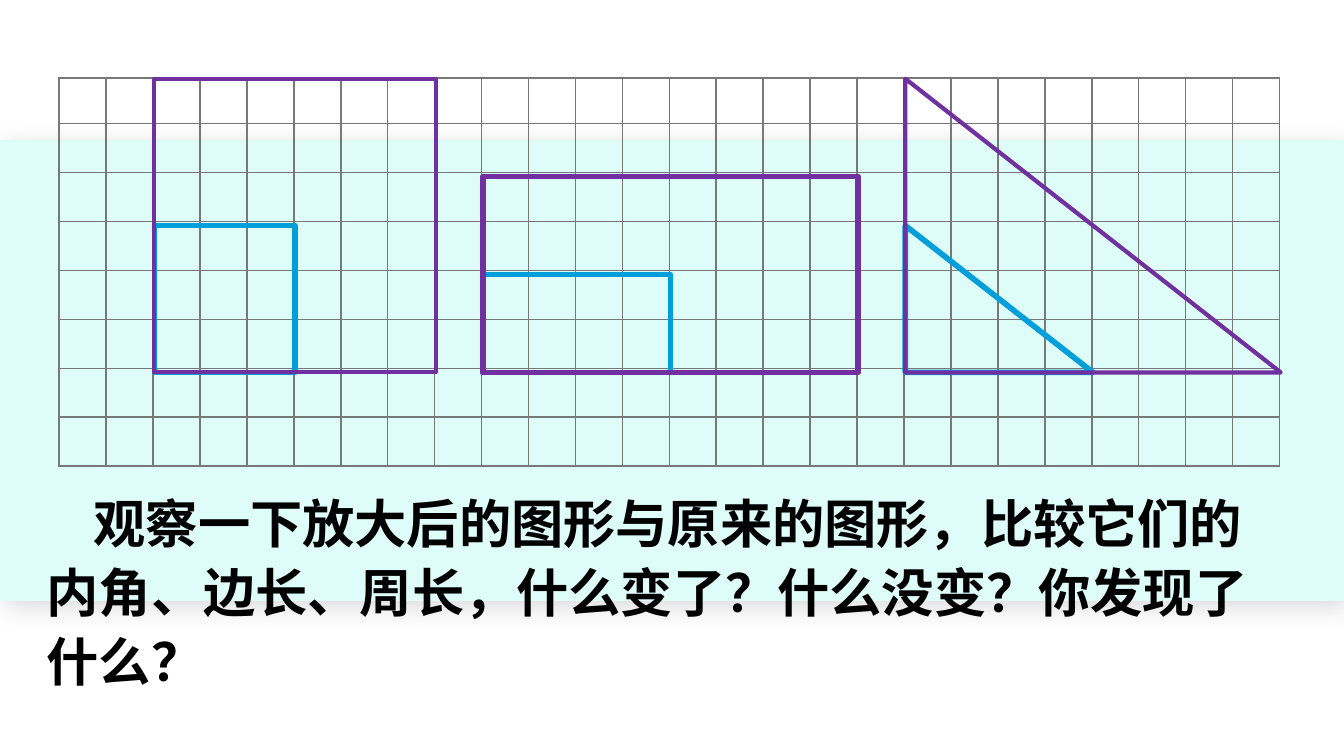
from lxml import etree
from pptx import Presentation
from pptx.dml.color import RGBColor
from pptx.enum.shapes import MSO_SHAPE
from pptx.oxml.ns import qn
from pptx.util import Inches, Pt

RECT, TRIANGLE = MSO_SHAPE.RECTANGLE, MSO_SHAPE.RIGHT_TRIANGLE
COLORS = {"band": "DEFDF8", "grid": "787878", "small": "009FDC",
          "large": "7030A0", "text": "000000", "shadow": "000000"}
FONT = "Noto Sans CJK SC"
W = 10
H = W * 9 / 16
COLS, ROWS = 26, 8
GRID = (0.44, 0.58, 9.08, 2.89)
FIRST_ROW = 0.34
COL_W = GRID[2] / COLS
ROW_H = (GRID[3] - FIRST_ROW) / (ROWS - 1)
BASE = GRID[1] + FIRST_ROW + 5 * ROW_H + 0.03

# shape, start column, columns wide, rows high, line width once enlarged
FIGURES = [(RECT, 2, 3, 3, 2.25), (RECT, 9, 4, 2, 3), (TRIANGLE, 18, 4, 3, 2.25)]
QUESTION = ("观察一下放大后的图形与原来的图形，比较它们的内角、边长、周长，"
            "什么变了？什么没变？你发现了什么？")


def rgb(name):
    return RGBColor.from_string(COLORS[name])


def inches(box):
    return [Inches(v) for v in box]


def add_solid(parent, color):
    fill = etree.SubElement(parent, qn("a:solidFill"))
    etree.SubElement(fill, qn("a:srgbClr"), val=COLORS[color])


def add_band(s, box):
    sp = s.shapes.add_shape(RECT, *inches(box))
    sp.fill.solid()
    sp.fill.fore_color.rgb = rgb("band")
    sp.line.fill.background()
    # Soft shadow
    sp.shadow.inherit = False
    effects = sp._element.spPr.find(qn("a:effectLst"))
    shadow = etree.SubElement(effects, qn("a:outerShdw"), blurRad=str(Pt(15)),
                              dist=str(Pt(5)), dir=str(45 * 60000),
                              algn="ctr", rotWithShape="0")
    color = etree.SubElement(shadow, qn("a:srgbClr"), val=COLORS["shadow"])
    etree.SubElement(color, qn("a:alpha"), val="15000")


def style_cell(cell):
    for side in ("left", "right", "top", "bottom"):
        setattr(cell, "margin_" + side, 0)
    # Small empty text keeps the row at its set height
    cell.text_frame.paragraphs[0]._p.get_or_add_endParaRPr().set("sz", "800")
    tc_pr = cell._tc.get_or_add_tcPr()
    for tag in ("a:lnL", "a:lnR", "a:lnT", "a:lnB"):
        add_solid(etree.SubElement(tc_pr, qn(tag), w=str(Pt(1))), "grid")
    cell.fill.background()


def add_grid(s, box):
    table = s.shapes.add_table(ROWS, COLS, *inches(box)).table
    table.first_row = table.horz_banding = False
    for col in table.columns:
        col.width = Inches(COL_W)
    for i, row in enumerate(table.rows):
        row.height = Inches(ROW_H if i else FIRST_ROW)
    for cell in table.iter_cells():
        style_cell(cell)


def add_figure(s, shape, box, color, width):
    sp = s.shapes.add_shape(shape, *inches(box))
    sp.shadow.inherit = False
    sp.fill.background()
    sp.line.color.rgb = rgb(color)
    sp.line.width = Pt(width)


def add_figures(s, left, base):
    # Every figure is drawn once, then doubled from the same corner
    for scale, color in ((1, "small"), (2, "large")):
        for shape, col, cols, rows, large_width in FIGURES:
            w, h = scale * cols * COL_W, scale * rows * ROW_H
            box = (left + col * COL_W, base - h, w, h)
            add_figure(s, shape, box, color, 3 if scale == 1 else large_width)


def add_question(s, box):
    tf = s.shapes.add_textbox(*inches(box)).text_frame
    tf.word_wrap = True
    p = tf.paragraphs[0]
    p.line_spacing = 1.1
    p._p.get_or_add_pPr().set("indent", str(Inches(0.35)))
    r = p.add_run()
    r.text = QUESTION
    for name, value in {"size": Pt(28), "bold": True, "name": FONT}.items():
        setattr(r.font, name, value)
    r.font.color.rgb = rgb("text")
    etree.SubElement(r._r.get_or_add_rPr(), qn("a:ea"), typeface=FONT)


def main():
    prs = Presentation()
    prs.slide_width, prs.slide_height = Inches(W), Inches(H)
    s = prs.slides.add_slide(prs.slide_layouts[6])
    add_band(s, (0, 0.185 * H, W, 0.61 * H))
    add_grid(s, GRID)
    add_figures(s, GRID[0] + 0.01, BASE)
    add_question(s, (0.025 * W, 3.56, 0.923 * W, 1.65))
    prs.save("out.pptx")


if __name__ == "__main__":
    main()
